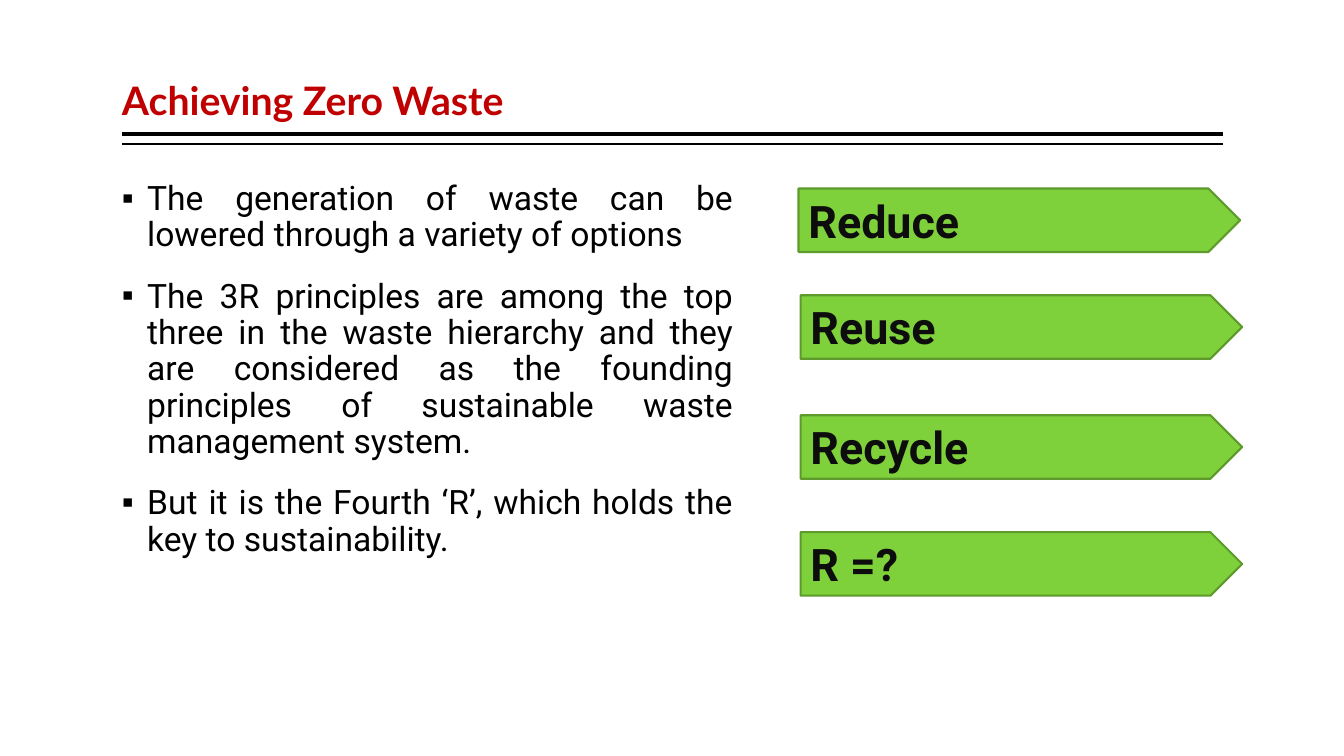
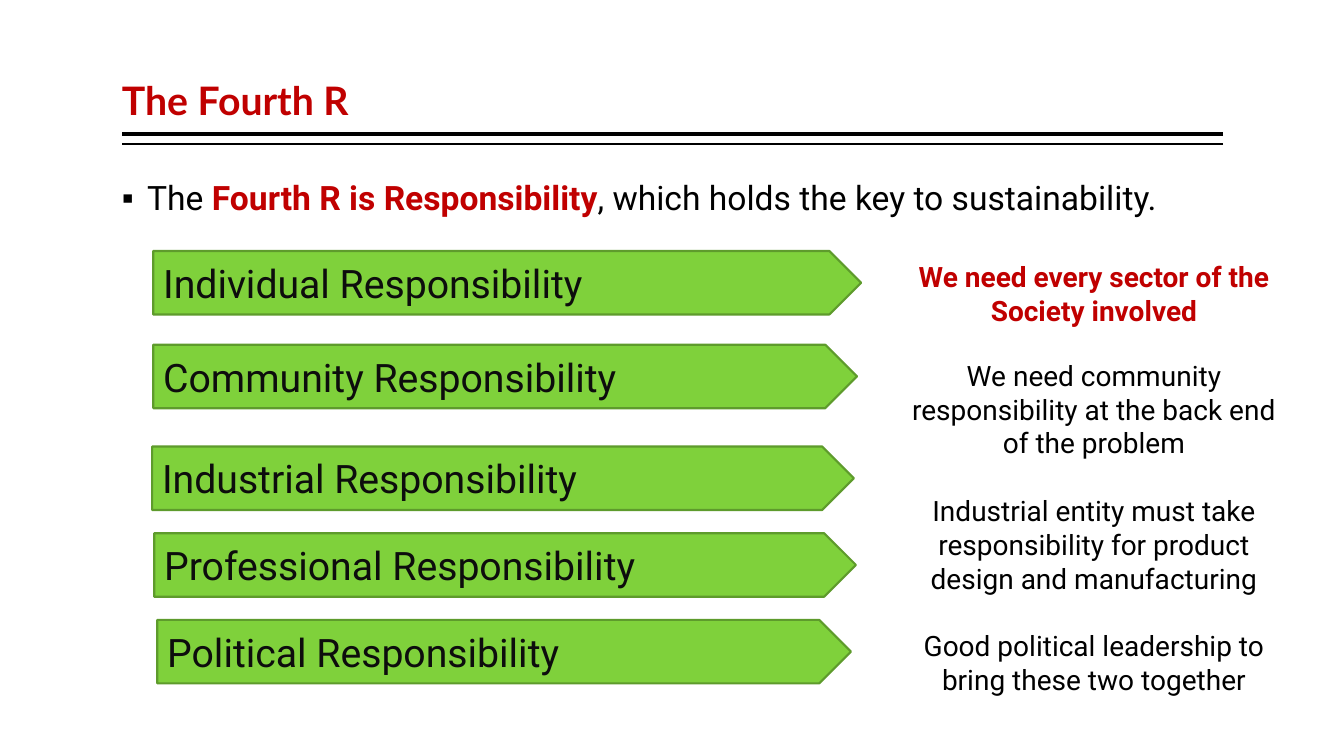
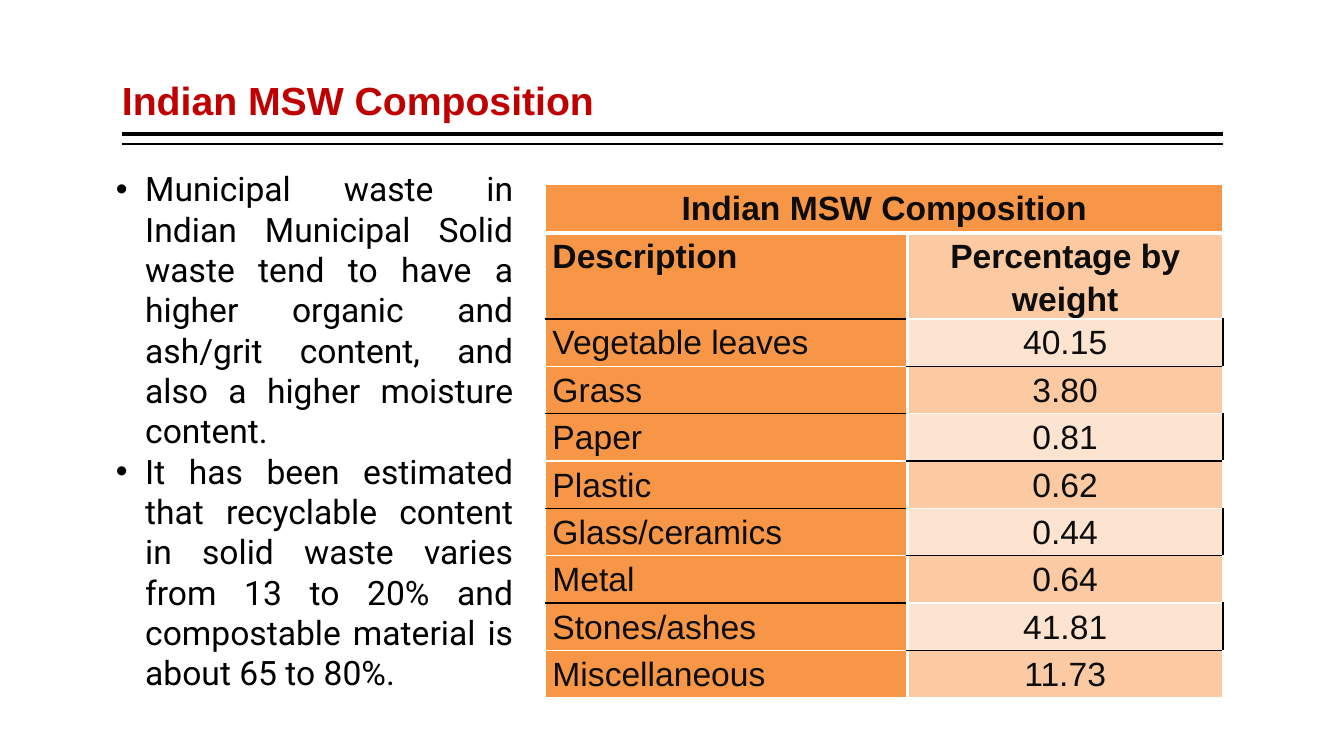
from dataclasses import dataclass

from lxml.etree import SubElement
from pptx import Presentation
from pptx.dml.color import RGBColor
from pptx.enum.shapes import MSO_CONNECTOR, MSO_SHAPE
from pptx.enum.text import MSO_ANCHOR, MSO_AUTO_SIZE, PP_ALIGN
from pptx.oxml import parse_xml
from pptx.oxml.ns import nsdecls, qn
from pptx.util import Inches, Pt


@dataclass(frozen=True)
class Theme:
    black: str = "000000"
    white: str = "FFFFFF"
    red: str = "C00000"
    ink: str = "0D0D0D"
    green: str = "7FD13B"
    green_edge: str = "5E9B2C"
    orange: str = "F79646"
    orange_mid: str = "FBCAA2"
    orange_pale: str = "FDE4D0"
    label_size: int = 32
    title_size: int = 28
    text_size: int = 24
    aside_size: int = 20
    heading_font: str = "Lato"
    text_font: str = "Roboto"
    table_font: str = "Arial"


THEME = Theme()


def style(size, color, name=THEME.text_font, bold=False):
    return {"size": Pt(size), "color": color, "name": name, "bold": bold}


TEXT = style(THEME.text_size, THEME.black)
TEXT_STRONG = style(THEME.text_size, THEME.red, bold=True)
TITLE = style(THEME.title_size, THEME.red, THEME.heading_font, True)
TITLE_ARIAL = {**TITLE, "name": THEME.table_font}
LABEL_STRONG = style(THEME.label_size, THEME.ink, bold=True)
LABEL = style(THEME.title_size, THEME.ink)
ASIDE = style(THEME.aside_size, THEME.black)
ASIDE_STRONG = {**ASIDE, "color": THEME.red, "bold": True}
CELL = style(THEME.text_size, THEME.ink, THEME.table_font)
CELL_STRONG = {**CELL, "bold": True}

FLUSH = {"margin_left": 0, "margin_right": 0, "word_wrap": True,
         "auto_size": MSO_AUTO_SIZE.NONE}
TITLE_FRAME = {**FLUSH, "vertical_anchor": MSO_ANCHOR.BOTTOM}
BODY_FRAME = {**FLUSH, "vertical_anchor": MSO_ANCHOR.TOP}
INSET_FRAME = {**BODY_FRAME, "margin_left": Inches(0.1), "margin_right": Inches(0.1)}
LABEL_FRAME = {"vertical_anchor": MSO_ANCHOR.MIDDLE, "word_wrap": True}

TIGHT = {"line_spacing": 0.9, "space_before": Pt(18), "alignment": PP_ALIGN.LEFT}
TIGHT_JUSTIFIED = {**TIGHT, "alignment": PP_ALIGN.JUSTIFY}
PLAIN_JUSTIFIED = {"space_before": Pt(0), "alignment": PP_ALIGN.JUSTIFY}
TITLE_PARAGRAPH = {"line_spacing": 0.9, "alignment": PP_ALIGN.LEFT}

MARGIN, CONTENT_WIDTH = 1.21, 10.92
TITLE_BOX = (MARGIN, 0.08, CONTENT_WIDTH, 1.2)
RULES = [(1.33, 3), (1.43, 1)]
ARROW_HEIGHT = 0.63

ZERO_WASTE_POINTS = [
    "The generation of waste can be lowered through a variety of options",
    "The 3R principles are among the top three in the waste hierarchy and they are "
    "considered as the founding principles of sustainable waste management system.",
    "But it is the Fourth ‘R’, which holds the key to sustainability.",
]
PRINCIPLES = [
    ("Reduce", 7.92, 1.87, 4.38),
    ("Reuse", 7.94, 2.93, 4.38),
    ("Recycle", 7.94, 4.12, 4.38),
    ("R =?", 7.94, 5.28, 4.38),
]
FOURTH_R = [
    ("The ", TEXT),
    ("Fourth R is Responsibility", TEXT_STRONG),
    (", which holds the key to sustainability.", TEXT),
]
RESPONSIBILITIES = [
    ("Individual", 1.52, 2.49, 7.02),
    ("Community", 1.52, 3.42, 6.98),
    ("Industrial", 1.51, 4.43, 6.96),
    ("Professional", 1.53, 5.29, 6.96),
    ("Political", 1.56, 6.15, 6.88),
]
SECTOR_NOTES = [
    ("We need every sector of the Society involved", ASIDE_STRONG, 0),
    ("We need community responsibility at the back end of the problem", ASIDE, 22.5),
    ("Industrial entity must take responsibility for product design and manufacturing",
     ASIDE, 24.5),
    ("Good political leadership to bring these two together", ASIDE, 24.5),
]
MSW_POINTS = [
    "Municipal waste in Indian Municipal Solid waste tend to have a higher organic "
    "and ash/grit content, and also a higher moisture content.",
    "It has been estimated that recyclable content in solid waste varies from 13 to 20% "
    "and compostable material is about 65 to 80%.",
]
MSW_TITLE = "Indian MSW Composition"
MSW_ROWS = [
    ("Description", "Percentage by weight"),
    ("Vegetable leaves", "40.15"),
    ("Grass", "3.80"),
    ("Paper", "0.81"),
    ("Plastic", "0.62"),
    ("Glass/ceramics", "0.44"),
    ("Metal", "0.64"),
    ("Stones/ashes", "41.81"),
    ("Miscellaneous", "11.73"),
]
MSW_COLUMNS = (3.59, 3.13)
MSW_ROW_HEIGHT = 0.47


def inches(*lengths):
    return [Inches(length) for length in lengths]


def apply(target, values):
    for name, value in values.items():
        if name == "color":
            target.color.rgb = RGBColor.from_string(value)
        else:
            setattr(target, name, value)


def place(part, box):
    apply(part, dict(zip(("left", "top", "width", "height"), inches(*box))))


def write(paragraph, runs, layout):
    apply(paragraph, layout)
    for text, font_style in runs:
        run = paragraph.add_run()
        run.text = text
        apply(run.font, font_style)


def write_all(frame, paragraphs, frame_style):
    apply(frame, frame_style)
    for index, (runs, layout) in enumerate(paragraphs):
        paragraph = frame.add_paragraph() if index else frame.paragraphs[0]
        write(paragraph, runs, layout)


def add_bullet(paragraph, mark, indent):
    properties = paragraph._p.get_or_add_pPr()
    properties.set("marL", str(Inches(indent)))
    properties.set("indent", str(-Inches(indent)))
    SubElement(properties, qn("a:buFont")).set("typeface", "Arial")
    SubElement(properties, qn("a:buChar")).set("char", mark)


def fill_body(slide, box, items, layout, frame_style=BODY_FRAME, mark="▪", indent=0.25):
    body = slide.placeholders[1]
    place(body, box)
    write_all(body.text_frame, [(runs, layout) for runs in items], frame_style)
    for paragraph in body.text_frame.paragraphs:
        add_bullet(paragraph, mark, indent)


def add_titled_slide(deck, title, title_style=TITLE):
    slide = deck.slides.add_slide(deck.slide_layouts[1])
    place(slide.shapes.title, TITLE_BOX)
    write_all(slide.shapes.title.text_frame,
              [([(title, title_style)], TITLE_PARAGRAPH)], TITLE_FRAME)
    for top, weight in RULES:
        rule = slide.shapes.add_connector(
            MSO_CONNECTOR.STRAIGHT, *inches(MARGIN + CONTENT_WIDTH, top, MARGIN, top))
        apply(rule.line, {"color": THEME.black, "width": Pt(weight)})
        SubElement(rule._element.spPr, qn("a:effectLst"))
    return slide


def add_arrow(slide, label, left, top, width, label_style):
    arrow = slide.shapes.add_shape(
        MSO_SHAPE.PENTAGON, *inches(left, top, width, ARROW_HEIGHT))
    arrow.shadow.inherit = False
    arrow.fill.solid()
    arrow.fill.fore_color.rgb = RGBColor.from_string(THEME.green)
    apply(arrow.line, {"color": THEME.green_edge, "width": Pt(1.5)})
    write_all(arrow.text_frame,
              [([(label, label_style)], {"alignment": PP_ALIGN.LEFT})], LABEL_FRAME)


def set_borders(cell, **edges):
    properties = cell._tc.get_or_add_tcPr()
    for position, side in enumerate("LRTB"):
        color, weight = edges.get(side, (THEME.white, 1))
        properties.insert(position, parse_xml(
            f'<a:ln{side} {nsdecls("a")} w="{Pt(weight)}"><a:solidFill>'
            f'<a:srgbClr val="{color}"/></a:solidFill></a:ln{side}>'))


def fill_cell(cell, text, font_style, alignment, color, edges):
    apply(cell, {"margin_left": Inches(0.07), "margin_right": Inches(0.07),
                 "margin_top": 0, "margin_bottom": 0})
    cell.fill.solid()
    cell.fill.fore_color.rgb = RGBColor.from_string(color)
    set_borders(cell, **edges)
    if text:
        write(cell.text_frame.paragraphs[0], [(text, font_style)],
              {"alignment": alignment, "line_spacing": 1.15})


def add_msw_table(slide):
    table = slide.shapes.add_table(
        len(MSW_ROWS) + 1, 2,
        *inches(5.41, 1.83, sum(MSW_COLUMNS), MSW_ROW_HEIGHT * (len(MSW_ROWS) + 1))).table
    for column, width in zip(table.columns, MSW_COLUMNS):
        column.width = Inches(width)
    for row in table.rows:
        row.height = Inches(MSW_ROW_HEIGHT)
    table.rows[0].height = Inches(0.48)

    thin, divider = (THEME.black, 1), (THEME.white, 3)
    table.cell(0, 0).merge(table.cell(0, 1))
    for column, text in enumerate((MSW_TITLE, "")):
        fill_cell(table.cell(0, column), text, CELL_STRONG, PP_ALIGN.CENTER,
                  THEME.orange, {"B": divider})
    for number, (material, share) in enumerate(MSW_ROWS):
        heading, pale = number == 0, number % 2 == 1
        font_style = CELL_STRONG if heading else CELL
        material_edges, share_edges = {"R": divider}, {"L": divider}
        if pale:
            material_edges["T"] = thin
            share_edges.update(R=thin, B=thin)
        else:
            if number < len(MSW_ROWS) - 1:
                material_edges["B"] = thin
            share_edges["T"] = thin
        if heading:
            material_edges["T"] = share_edges["T"] = divider
        fill_cell(table.cell(number + 1, 0), material, font_style, PP_ALIGN.LEFT,
                  THEME.orange, material_edges)
        fill_cell(table.cell(number + 1, 1), share, font_style, PP_ALIGN.CENTER,
                  THEME.orange_pale if pale else THEME.orange_mid, share_edges)


def build_zero_waste(deck):
    slide = add_titled_slide(deck, "Achieving Zero Waste")
    fill_body(slide, (MARGIN, 1.75, 6.06, 5.75),
              [[(point, TEXT)] for point in ZERO_WASTE_POINTS], TIGHT_JUSTIFIED)
    for principle in PRINCIPLES:
        add_arrow(slide, *principle, LABEL_STRONG)


def build_fourth_r(deck):
    slide = add_titled_slide(deck, "The Fourth R")
    fill_body(slide, (MARGIN, 1.75, CONTENT_WIDTH, 5), [FOURTH_R], TIGHT)
    for sector, *position in RESPONSIBILITIES:
        add_arrow(slide, f"{sector} Responsibility", *position, LABEL)
    notes = slide.shapes.add_textbox(*inches(8.94, 2.53, 3.82, 4.75))
    write_all(notes.text_frame,
              [([(text, font_style)],
                {"alignment": PP_ALIGN.CENTER, "space_before": Pt(gap)})
               for text, font_style, gap in SECTOR_NOTES], INSET_FRAME)


def build_msw(deck):
    slide = add_titled_slide(deck, MSW_TITLE, TITLE_ARIAL)
    fill_body(slide, (1.05, 1.62, 4.14, 5.35), [[(point, TEXT)] for point in MSW_POINTS],
              PLAIN_JUSTIFIED, INSET_FRAME, "•", 0.29)
    add_msw_table(slide)


def main():
    deck = Presentation()
    apply(deck, {"slide_width": Inches(13.33), "slide_height": Inches(7.5)})
    for build in (build_zero_waste, build_fourth_r, build_msw):
        build(deck)
    deck.save("out.pptx")


if __name__ == "__main__":
    main()
